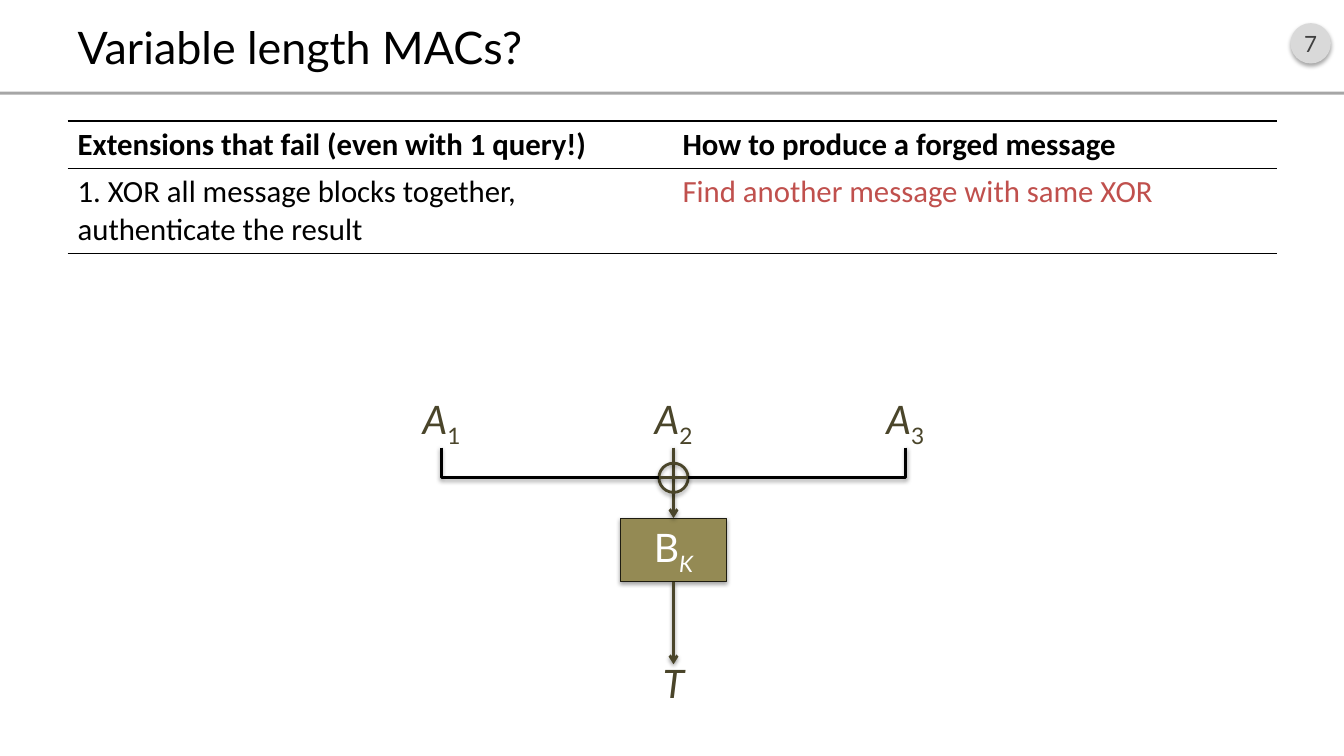
"""Build the slide on variable length MACs with its table and XOR diagram."""
from lxml import etree
from pptx import Presentation
from pptx.dml.color import RGBColor
from pptx.enum.shapes import MSO_CONNECTOR, MSO_SHAPE
from pptx.enum.text import MSO_ANCHOR, PP_ALIGN
from pptx.oxml import parse_xml
from pptx.oxml.ns import nsdecls, qn
from pptx.util import Inches, Pt

STRAIGHT = MSO_CONNECTOR.STRAIGHT
RECTANGLE, OVAL = MSO_SHAPE.RECTANGLE, MSO_SHAPE.OVAL
MIDDLE, LEFT, CENTER = MSO_ANCHOR.MIDDLE, PP_ALIGN.LEFT, PP_ALIGN.CENTER

TITLE = "Variable length MACs?"
PAGE = "7"
HEADERS = ["Extensions that fail (even with 1 query!)", "How to produce a forged message"]
EXTENSION = ["1. XOR all message blocks together, authenticate the result",
             "Find another message with same XOR"]
BLOCKS = [("A", "1"), ("A", "2"), ("A", "3")]
CIPHER = ("B", "K")
TAG = "T"

COLORS = {"black": "000000", "white": "FFFFFF", "attack": "C0504D", "ink": "4A452A",
          "cipher": "948A54", "cipher_edge": "1E1C11", "badge": "D9D9D9",
          "page": "404040", "rule": "A6A6A6"}
NO_GRID_STYLE = "{2D5ABB26-0587-4C30-8999-92F81FD0307C}"

AXIS = 6.68
BLOCK_GAP = 2.3
BLOCK_TOP, BLOCK_WIDTH, LABEL_HEIGHT = 3.87, 1.54, 0.57
BLOCK_BOTTOM = BLOCK_TOP + LABEL_HEIGHT
XOR_Y, XOR_RADIUS = 4.74, 0.145
CIPHER_TOP, CIPHER_WIDTH, CIPHER_HEIGHT = 5.14, 1.06, 0.63
TAG_TOP, TAG_WIDTH, ARROW_END = 6.49, 1.62, 6.59


def rgb(name):
    return RGBColor.from_string(COLORS[name])


def format_run(run, size, color, font="Lato", bold=False, italic=False):
    run.font.size, run.font.name = Pt(size), font
    run.font.bold, run.font.italic = bold, italic
    run.font.color.rgb = rgb(color)


def write_symbol(frame, letter, index, color, italic_letter):
    frame.word_wrap = True
    paragraph = frame.paragraphs[0]
    paragraph.alignment = CENTER
    paragraph.text = letter
    format_run(paragraph.runs[0], 28, color, italic=italic_letter)
    if index:
        subscript = paragraph.add_run()
        subscript.text = index
        format_run(subscript, 28, color, italic=not italic_letter)
        subscript.font._element.set("baseline", "-25000")


def add_label(shapes, center, top, width, letter, index=""):
    label = shapes.add_textbox(Inches(center - width / 2), Inches(top),
                               Inches(width), Inches(LABEL_HEIGHT))
    write_symbol(label.text_frame, letter, index, "ink", True)
    return label


def add_solid(shapes, kind, left, top, width, height, fill):
    solid = shapes.add_shape(kind, Inches(left), Inches(top), Inches(width), Inches(height))
    solid.shadow.inherit = False
    solid.fill.solid()
    solid.fill.fore_color.rgb = rgb(fill)
    solid.line.fill.background()
    return solid


def set_line(shape, color, width=2):
    shape.line.color.rgb = rgb(color)
    shape.line.width = Pt(width)


def cast_shadow(shape, distance=1.8, opacity=35):
    properties = shape._element.spPr
    for effects in properties.findall(qn("a:effectLst")):
        properties.remove(effects)
    properties.append(parse_xml(
        f'<a:effectLst {nsdecls("a")}><a:outerShdw blurRad="{Pt(3.1)}" dist="{Pt(distance)}" '
        f'dir="5400000" rotWithShape="0"><a:srgbClr val="{COLORS["black"]}">'
        f'<a:alpha val="{opacity * 1000}"/></a:srgbClr></a:outerShdw></a:effectLst>'))


def add_wire(shapes, x1, y1, x2, y2, arrow=False):
    wire = shapes.add_connector(STRAIGHT, Inches(x1), Inches(y1), Inches(x2), Inches(y2))
    set_line(wire, "ink")
    if arrow:
        etree.SubElement(wire.line._get_or_add_ln(), qn("a:tailEnd"), type="arrow")
    cast_shadow(wire, 1.6, 38)
    return wire


def add_elbow(shapes, center, ring_side):
    outline = shapes.build_freeform(Inches(center), Inches(BLOCK_BOTTOM))
    outline.add_line_segments([(Inches(center), Inches(XOR_Y)),
                               (Inches(ring_side), Inches(XOR_Y))], close=False)
    elbow = outline.convert_to_shape()
    elbow.fill.background()
    set_line(elbow, "black")
    cast_shadow(elbow, 1.6, 38)


def add_header(slide):
    badge = add_solid(slide.shapes, OVAL, 12.8, 0.23, 0.4, 0.4, "badge")
    cast_shadow(badge)
    frame = badge.text_frame
    frame.margin_left = frame.margin_right = 0
    frame.vertical_anchor = MIDDLE
    frame.text = PAGE
    frame.paragraphs[0].alignment = CENTER
    format_run(frame.paragraphs[0].runs[0], 16, "page")
    add_solid(slide.shapes, RECTANGLE, 0, 0.91, 13.33, 0.03, "rule")

    title = slide.shapes.title
    title.left, title.top, title.width, title.height = map(Inches, (0.67, 0.16, 12, 0.6))
    title.text_frame.text = TITLE
    title.text_frame.vertical_anchor = MIDDLE
    title.text_frame.paragraphs[0].alignment = LEFT
    format_run(title.text_frame.paragraphs[0].runs[0], 32, "black")


def add_border(cell, side):
    border = etree.SubElement(cell._tc.get_or_add_tcPr(), qn(f"a:{side}"), w=str(Pt(1)))
    fill = etree.SubElement(border, qn("a:solidFill"))
    etree.SubElement(fill, qn("a:srgbClr"), val=COLORS["black"])


def add_attack_table(shapes):
    table = shapes.add_table(2, 2, Inches(0.67), Inches(1.2), Inches(12), Inches(1.31)).table
    table._tbl.tblPr.find(qn("a:tableStyleId")).text = NO_GRID_STYLE
    table.horz_banding = False
    for row, height in zip(table.rows, (0.47, 0.84)):
        row.height = Inches(height)
    for r, texts in enumerate((HEADERS, EXTENSION)):
        for c, text in enumerate(texts):
            cell = table.cell(r, c)
            add_border(cell, "lnT")
            add_border(cell, "lnB")
            cell.fill.background()
            cell.text_frame.text = text
            color = "attack" if r and c else "black"
            format_run(cell.text_frame.paragraphs[0].runs[0], 22, color, "Calibri", bold=r == 0)


def add_diagram(shapes):
    centers = [AXIS + (i - 1) * BLOCK_GAP for i in range(len(BLOCKS))]
    labels = [add_label(shapes, center, BLOCK_TOP, BLOCK_WIDTH, *block)
              for center, block in zip(centers, BLOCKS)]

    cipher = add_solid(shapes, RECTANGLE, AXIS - CIPHER_WIDTH / 2, CIPHER_TOP,
                       CIPHER_WIDTH, CIPHER_HEIGHT, "cipher")
    set_line(cipher, "cipher_edge", 0.75)
    cast_shadow(cipher)
    cipher.text_frame.vertical_anchor = MIDDLE
    write_symbol(cipher.text_frame, *CIPHER, "white", False)

    cipher_input = add_wire(shapes, AXIS, BLOCK_BOTTOM, AXIS, CIPHER_TOP, arrow=True)
    cipher_input.begin_connect(labels[1], 2)
    cipher_input.end_connect(cipher, 0)
    cipher_output = add_wire(shapes, AXIS, CIPHER_TOP + CIPHER_HEIGHT, AXIS, ARROW_END, arrow=True)
    cipher_output.begin_connect(cipher, 2)
    add_label(shapes, AXIS, TAG_TOP, TAG_WIDTH, TAG)

    ring_left, ring_right = AXIS - XOR_RADIUS, AXIS + XOR_RADIUS
    ring = shapes.add_shape(OVAL, Inches(ring_left), Inches(XOR_Y - XOR_RADIUS),
                            Inches(2 * XOR_RADIUS), Inches(2 * XOR_RADIUS))
    ring.fill.background()
    set_line(ring, "ink")
    cast_shadow(ring)
    add_elbow(shapes, centers[0], ring_left)
    add_elbow(shapes, centers[-1], ring_right)
    add_wire(shapes, ring_left, XOR_Y, ring_right, XOR_Y)


def main():
    deck = Presentation()
    deck.slide_width, deck.slide_height = Inches(13.33), Inches(7.5)
    slide = deck.slides.add_slide(deck.slide_layouts[5])
    add_header(slide)
    add_attack_table(slide.shapes)
    add_diagram(slide.shapes)
    deck.save("out.pptx")


if __name__ == "__main__":
    main()
